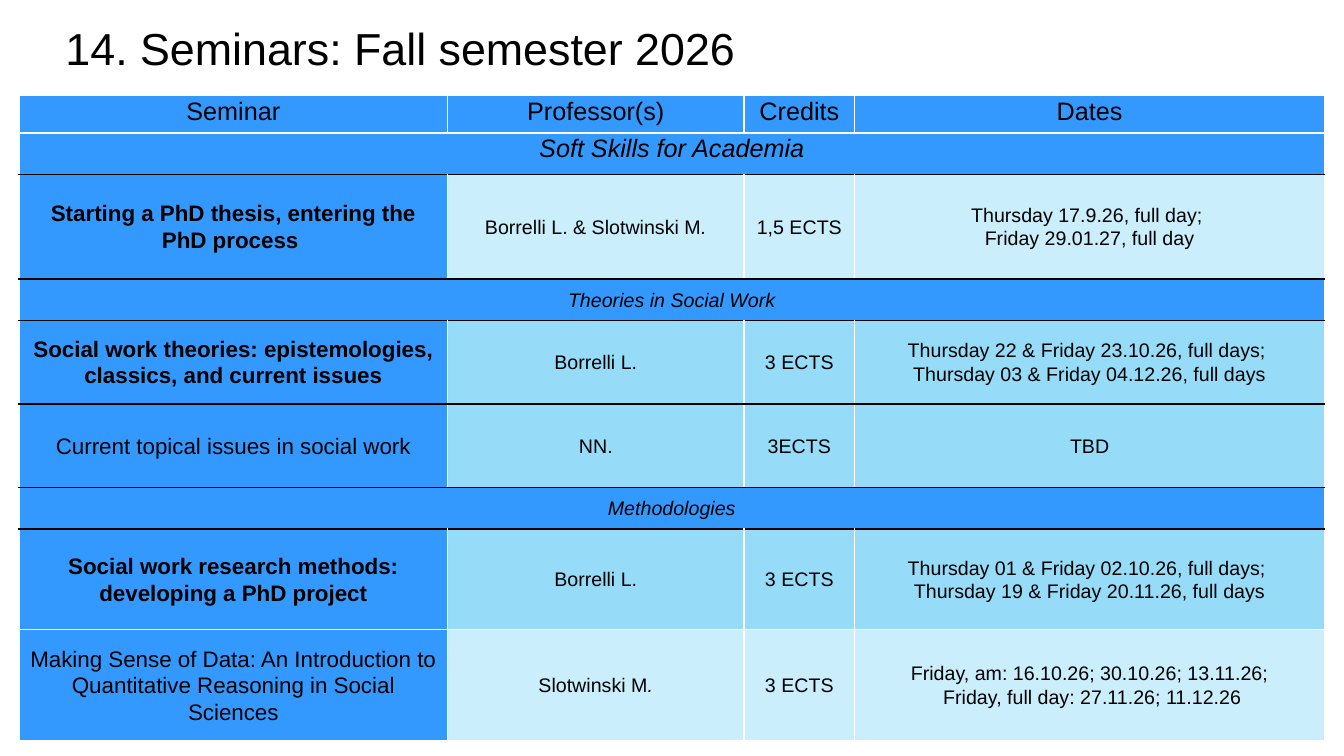
import pptx
import pptx.util
import pptx.dml.color
import pptx.enum.text
import pptx.oxml
import pptx.oxml.ns

Cm, Pt = pptx.util.Cm, pptx.util.Pt
PP_ALIGN, MSO_ANCHOR = pptx.enum.text.PP_ALIGN, pptx.enum.text.MSO_ANCHOR
COLORS = {"text": "000000", "rule": "000000", "grid": "FFFFFF",
          "main": "3399FF", "pale": "CAEEFB", "mid": "96DCF8"}

COL_WIDTHS = [10.8, 7.47, 2.79, 11.84]
ROW_HEIGHTS = [0.94, 1.04, 2.64, 1.04, 2.11, 2.11, 1.04, 2.54, 2.79]
HEADER = ["Seminar", "Professor(s)", "Credits", "Dates"]

# Section title, title size, then seminars: bold, shade, four texts
# A line feed starts a paragraph, a vertical tab a line
SECTIONS = [
    ("Soft Skills for Academia", 18, [
        (True, "pale", "Starting a PhD thesis, entering the PhD process ",
         "Borrelli L. & Slotwinski M.", "1,5 ECTS",
         "Thursday 17.9.26, full day; \vFriday 29.01.27, full day")]),
    ("Theories in Social Work", 14, [
        (True, "mid", "Social work theories: epistemologies, classics, and current issues",
         "Borrelli L.", "3 ECTS",
         "Thursday 22 & Friday 23.10.26, full days; \nThursday 03 & Friday 04.12.26, full days"),
        (False, "mid", "Current topical issues in social work", "NN.", "3ECTS", "TBD")]),
    ("Methodologies", 14, [
        (True, "mid", "Social work research methods: developing a PhD project",
         "Borrelli L.", "3 ECTS",
         "Thursday 01 & Friday 02.10.26, full days; \vThursday 19 & Friday 20.11.26, full days"),
        (False, "pale", "Making Sense of Data: An Introduction to Quantitative Reasoning in Social Sciences",
         "Slotwinski M.", "3 ECTS",
         "Friday, am: 16.10.26; 30.10.26; 13.11.26;\v Friday, full day: 27.11.26; 11.12.26")]),
]
ROOMY_CELLS = {(2, 3), (7, 3), (8, 0)}
BLACK_EDGES = range(2, 8)


def write(tf, text, size=14, bold=False, italic=False, align=PP_ALIGN.CENTER,
          spacing=1.07, after=0):
    """Fill a text frame, one paragraph per line feed."""
    for i, line in enumerate(text.split("\n")):
        p = tf.paragraphs[0] if i == 0 else tf.add_paragraph()
        p.alignment, p.line_spacing, p.space_after = align, spacing, Pt(after)
        p.text = line
        for r in p.runs:
            r.font.name, r.font.size = "Arial", Pt(size)
            r.font.bold, r.font.italic = bold, italic
            r.font.color.rgb = pptx.dml.color.RGBColor.from_string(COLORS["text"])


class Deck:
    def __init__(self):
        self.prs = pptx.Presentation()
        self.prs.slide_width, self.prs.slide_height = Cm(33.87), Cm(19.05)
        self.s = self.prs.slides.add_slide(self.prs.slide_layouts[6])

    def title(self, text, x, y, w, h):
        tf = self.s.shapes.add_textbox(Cm(x), Cm(y), Cm(w), Cm(h)).text_frame
        tf.word_wrap = True
        write(tf, text, size=32, align=PP_ALIGN.LEFT, spacing=0.9)

    def table(self, x, y, widths, heights):
        frame = self.s.shapes.add_table(len(heights), len(widths), Cm(x), Cm(y),
                                        Cm(sum(widths)), Cm(sum(heights)))
        self.tbl = frame.table
        for column, width in zip(self.tbl.columns, widths):
            column.width = Cm(width)
        for row, height in zip(self.tbl.rows, heights):
            row.height = Cm(height)

    def cell(self, row, col, text, fill, **fmt):
        cell = self.tbl.cell(row, col)
        roomy = (row, col) in ROOMY_CELLS
        cell.margin_left = cell.margin_right = Cm(0.25 if roomy else 0.18)
        cell.margin_top = cell.margin_bottom = 0
        cell.vertical_anchor = MSO_ANCHOR.TOP if row < 2 else MSO_ANCHOR.MIDDLE
        self.borders(cell, row)
        cell.fill.solid()
        cell.fill.fore_color.rgb = pptx.dml.color.RGBColor.from_string(COLORS[fill])
        if text:
            write(cell.text_frame, text, after=8 if roomy else 0, **fmt)

    def borders(self, cell, row):
        tcPr = cell._tc.get_or_add_tcPr()
        top, bottom = ("rule" if edge in BLACK_EDGES else "grid" for edge in (row, row + 1))
        for side, color in zip("LRTB", ("grid", "grid", top, bottom)):
            tcPr.append(pptx.oxml.parse_xml(
                f'<a:ln{side} {pptx.oxml.ns.nsdecls("a")} w="12700"><a:solidFill>'
                f'<a:srgbClr val="{COLORS[color]}"/></a:solidFill></a:ln{side}>'))

    def section(self, row, text, size):
        for col in range(len(COL_WIDTHS)):
            self.cell(row, col, "" if col else text, "main", size=size, italic=True)
        self.tbl.cell(row, 0).merge(self.tbl.cell(row, len(COL_WIDTHS) - 1))

    def seminar(self, row, bold, shade, name, *details):
        self.cell(row, 0, name, "main", size=16, bold=bold)
        for col, text in enumerate(details, 1):
            self.cell(row, col, text, shade)
        # Italic full stop after the initial M
        if details[0].endswith("M."):
            p = self.tbl.cell(row, 1).text_frame.paragraphs[0]
            p.runs[0].text = details[0][:-1]
            r = p.add_run()
            r.text = "."
            r.font.name, r.font.size, r.font.italic = "Arial", Pt(14), True


def main():
    deck = Deck()

    # Table header
    deck.table(0.48, 2.41, COL_WIDTHS, ROW_HEIGHTS)
    for col, text in enumerate(HEADER):
        deck.cell(0, col, text, "main", size=18)

    # Sections and their seminars
    row = 1
    for name, size, seminars in SECTIONS:
        deck.section(row, name, size)
        for row, seminar in enumerate(seminars, row + 1):
            deck.seminar(row, *seminar)
        row += 1

    # Slide title
    deck.title("14. Seminars: Fall semester 2026", 1.4, 0.56, 31.06, 3.68)
    deck.prs.save("out.pptx")


if __name__ == "__main__":
    main()
